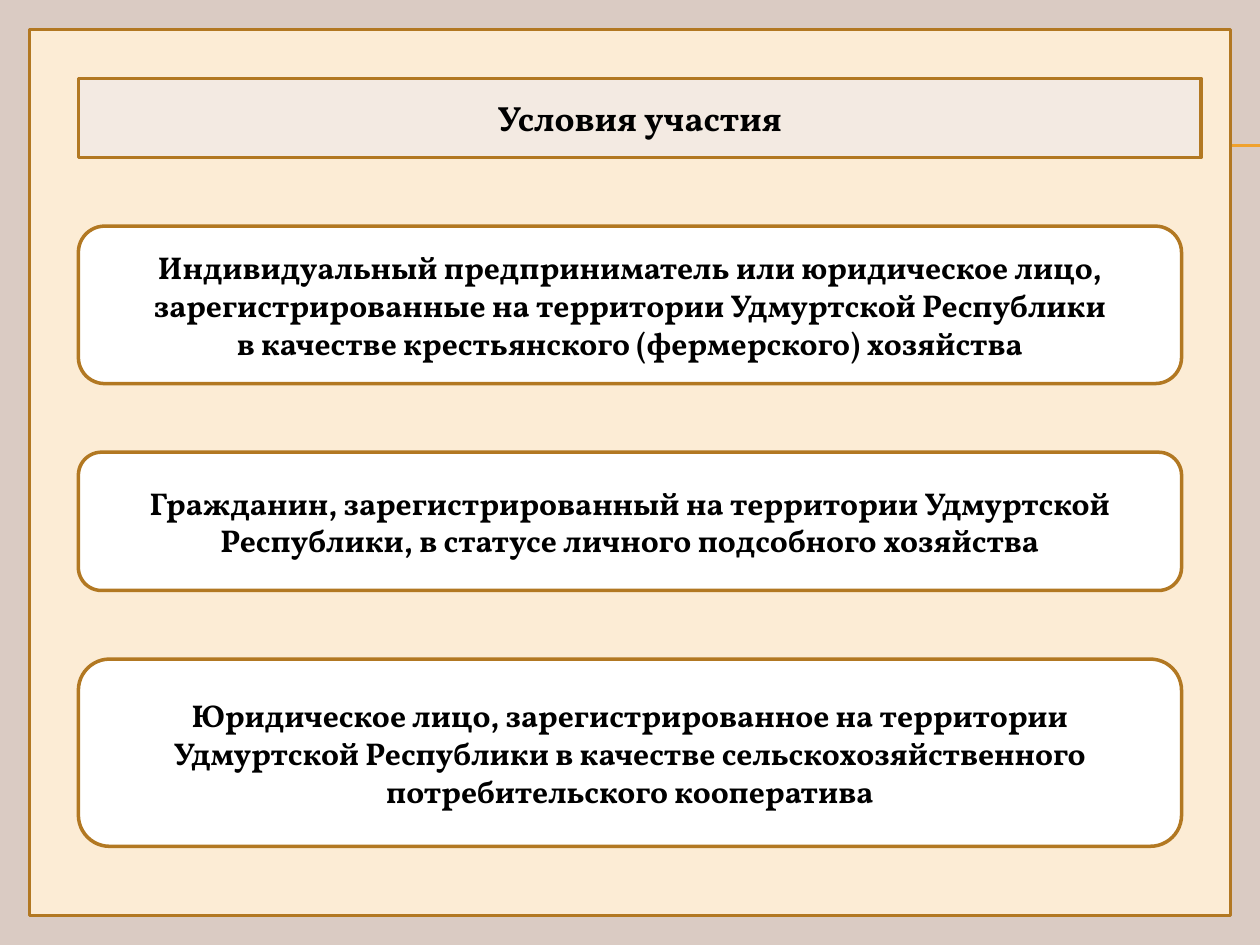
from lxml import etree
from pptx import Presentation
from pptx.dml.color import RGBColor
from pptx.enum.shapes import MSO_CONNECTOR, MSO_SHAPE
from pptx.enum.text import MSO_ANCHOR, MSO_AUTO_SIZE, PP_ALIGN
from pptx.oxml.ns import qn
from pptx.util import Pt

STRAIGHT = MSO_CONNECTOR.STRAIGHT
RECTANGLE, ROUNDED = MSO_SHAPE.RECTANGLE, MSO_SHAPE.ROUNDED_RECTANGLE
MIDDLE, CENTER, NO_AUTOFIT = MSO_ANCHOR.MIDDLE, PP_ALIGN.CENTER, MSO_AUTO_SIZE.NONE

FONT = "Vollkorn"
BACKDROP, RULE, BORDER = "DACBC3", "F0A22E", "B27822"
FRAME, HEADING, CARD, TEXT = "FCECD5", "F3EAE2", "FFFFFF", "000000"
GAP = 39.2
CONDITIONS = [
    (90, ["Индивидуальный предприниматель или юридическое лицо, "
          "зарегистрированные на территории Удмуртской Республики",
          "в качестве крестьянского (фермерского) хозяйства"]),
    (79, ["Гражданин, зарегистрированный на территории Удмуртской "
          "Республики, в статусе личного подсобного хозяйства"]),
    (107, ["Юридическое лицо, зарегистрированное на территории "
           "Удмуртской Республики в качестве сельскохозяйственного "
           "потребительского кооператива"]),
]


def paint(target, color):
    """Give a fill a solid colour from a hex string."""
    target.solid()
    target.fore_color.rgb = RGBColor.from_string(color)


def style_panel(panel, color):
    """Fill a panel and draw its brown border."""
    paint(panel.fill, color)
    paint(panel.line.fill, BORDER)
    panel.line.width = Pt(2)


def write(panel, paragraphs, size):
    """Write centred bold paragraphs in a panel."""
    frame = panel.text_frame
    frame.text = "\n".join(paragraphs)
    frame.word_wrap = True
    frame.auto_size = NO_AUTOFIT
    frame.vertical_anchor = MIDDLE
    for paragraph in frame.paragraphs:
        paragraph.alignment = CENTER
        font = paragraph.font
        font.name, font.size, font.bold = FONT, Pt(size), True
        paint(font.fill, TEXT)


def add_panel(slide, preset, box, color):
    """Add a bordered panel without a shadow in the given box."""
    panel = slide.shapes.add_shape(preset, *map(Pt, box))
    panel.shadow.inherit = False
    style_panel(panel, color)
    return panel


def add_double_rule(slide, left, top, width):
    """Draw the pair of thin rules running to the slide's edge."""
    for y in (top, top + 0.7):
        rule = slide.shapes.add_connector(
            STRAIGHT, Pt(left), Pt(y), Pt(left + width), Pt(y))
        paint(rule.line.fill, RULE)
        rule.line.width = Pt(0.75)
        etree.SubElement(rule.element.spPr, qn("a:effectLst"))


def add_heading(slide, left, top, width, height):
    """Turn the title placeholder into a rounded heading panel."""
    title = slide.shapes.title
    title.left, title.top, title.width, title.height = map(
        Pt, (left, top, width, height))
    geometry = etree.SubElement(
        title.element.spPr, qn("a:prstGeom"), prst="roundRect")
    etree.SubElement(geometry, qn("a:avLst"))
    style_panel(title, HEADING)
    write(title, ["Условия участия"], 20)
    title.element.getparent().append(title.element)


def add_conditions(slide, left, top, width):
    """Stack the condition cards with equal gaps."""
    for height, paragraphs in CONDITIONS:
        card = add_panel(slide, ROUNDED, (left, top, width, height), CARD)
        write(card, paragraphs, 18)
        top += height + GAP


def main():
    """Build the slide and save it."""
    presentation = Presentation()
    presentation.slide_width, presentation.slide_height = Pt(720), Pt(540)
    slide = presentation.slides.add_slide(presentation.slide_layouts[5])
    paint(slide.background.fill, BACKDROP)
    add_double_rule(slide, 40, 82.8, 680)
    add_panel(slide, RECTANGLE, (16.8, 16.8, 686.4, 506.4), FRAME)
    add_heading(slide, 44.8, 44.8, 641.6, 45.2)
    add_conditions(slide, 44.8, 90 + GAP, 630.4)
    presentation.save("out.pptx")


if __name__ == "__main__":
    main()
